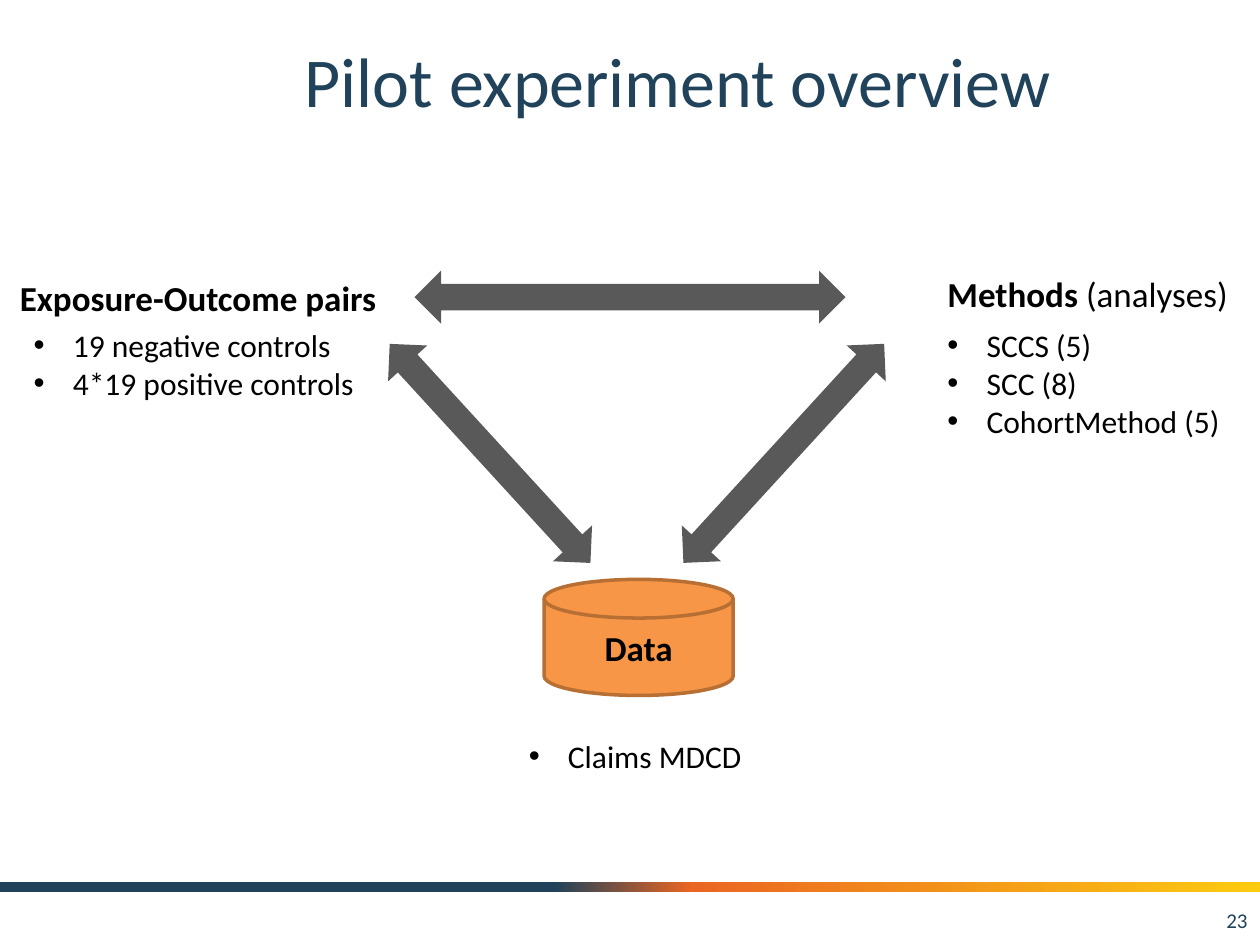
from copy import deepcopy

from lxml.etree import SubElement
from pptx import Presentation
from pptx.dml.color import RGBColor
from pptx.enum.shapes import MSO_SHAPE
from pptx.enum.text import MSO_ANCHOR, PP_ALIGN
from pptx.oxml.ns import qn
from pptx.util import Cm, Pt

NAVY, BLACK, GREY = "20425A", "000000", "595959"
ORANGE, BROWN = "F79646", "B76F34"
TITLE = "Pilot experiment overview"
PAGE = "23"
BAR_STOPS = [(0.44, NAVY), (0.55, "EB6622"), (1, "FCCB10")]
HEADINGS = [
    ((18.85, 5.36, 6.22, 1.12), [("Methods", True), (" (analyses)", False)]),
    ((0.15, 5.44, 7.77, 1.12), [("Exposure-Outcome pairs", True)]),
]
LISTS = [
    ((10.41, 14.73, 4.93, 1.02), ["Claims MDCD"]),
    ((18.85, 6.45, 6.07, 3.33), ["SCCS (5)", "SCC (8)", "CohortMethod (5)"]),
    ((0.43, 6.45, 7.04, 2.57), ["19 negative controls", "4*19 positive controls"]),
]
ARROW_WIDTH = 1.07
ARROWS = [(15.8, 9.14, 5.99, 42.5), (9.88, 9.14, 5.99, -42.5), (12.7, 5.99, 8.69, 90)]


def rgb(color):
    return RGBColor.from_string(color)


def box(values):
    return [Cm(v) for v in values]


def write(tf, paragraphs, size=18, color=BLACK, align=PP_ALIGN.LEFT,
          anchor=MSO_ANCHOR.TOP, wrap=False, bullet=False):
    tf.word_wrap = wrap
    tf.vertical_anchor = anchor
    for i, runs in enumerate(paragraphs):
        p = tf.add_paragraph() if i else tf.paragraphs[0]
        p.alignment = align
        if bullet:
            pPr = p._p.get_or_add_pPr()
            pPr.set("marL", str(Cm(0.79)))
            pPr.set("indent", str(-Cm(0.79)))
            SubElement(pPr, qn("a:buFont")).set("typeface", "Arial")
            SubElement(pPr, qn("a:buChar")).set("char", "•")
        for text, bold in runs:
            r = p.add_run()
            r.text = text
            r.font.name = "Calibri"
            r.font.size = Pt(size)
            r.font.bold = bold
            r.font.color.rgb = rgb(color)


def add_shape(s, kind, at, fill=None, line=None):
    sp = s.shapes.add_shape(kind, *box(at))
    sp.shadow.inherit = False
    if fill:
        sp.fill.solid()
        sp.fill.fore_color.rgb = rgb(fill)
    if line:
        sp.line.color.rgb = rgb(line)
        sp.line.width = Pt(2)
    else:
        sp.line.fill.background()
    return sp


def add_text(s, at, paragraphs, **style):
    write(s.shapes.add_textbox(*box(at)).text_frame, paragraphs, **style)


def add_bar(s):
    fill = add_shape(s, MSO_SHAPE.RECTANGLE, (0, 17.78, 25.4, 0.2)).fill
    fill.gradient()
    fill.gradient_angle = 0
    last = fill.gradient_stops[-1]._gs
    last.addnext(deepcopy(last))
    for stop, (position, color) in zip(fill.gradient_stops, BAR_STOPS):
        stop.position = position
        stop.color.rgb = rgb(color)


def main():
    prs = Presentation()
    prs.slide_width, prs.slide_height = Cm(25.4), Cm(19.05)
    s = prs.slides.add_slide(prs.slide_layouts[5])
    add_bar(s)

    title = s.shapes.title
    title.left, title.top, title.width, title.height = box((3.18, 0.43, 20.96, 2.34))
    write(title.text_frame, [[(TITLE, False)]], size=40, color=NAVY,
          align=PP_ALIGN.CENTER, anchor=MSO_ANCHOR.MIDDLE, wrap=True)
    add_text(s, (19.48, 18.03, 5.92, 1.02), [[(PAGE, False)]], size=12, color=NAVY,
             align=PP_ALIGN.RIGHT, anchor=MSO_ANCHOR.MIDDLE, wrap=True)

    disk = add_shape(s, MSO_SHAPE.FLOWCHART_MAGNETIC_DISK,
                     (10.97, 11.68, 3.81, 2.34), ORANGE, BROWN)
    write(disk.text_frame, [[("Data", True)]], size=20, align=PP_ALIGN.CENTER,
          anchor=MSO_ANCHOR.MIDDLE, wrap=True)

    for x, y, length, angle in ARROWS:
        at = (x - ARROW_WIDTH / 2, y - length / 2, ARROW_WIDTH, length)
        add_shape(s, MSO_SHAPE.UP_DOWN_ARROW, at, GREY).rotation = angle
    for at, runs in HEADINGS:
        add_text(s, at, [runs], size=20)
    for at, items in LISTS:
        add_text(s, at, [[(item, False)] for item in items], bullet=True)

    prs.save("out.pptx")


if __name__ == "__main__":
    main()
